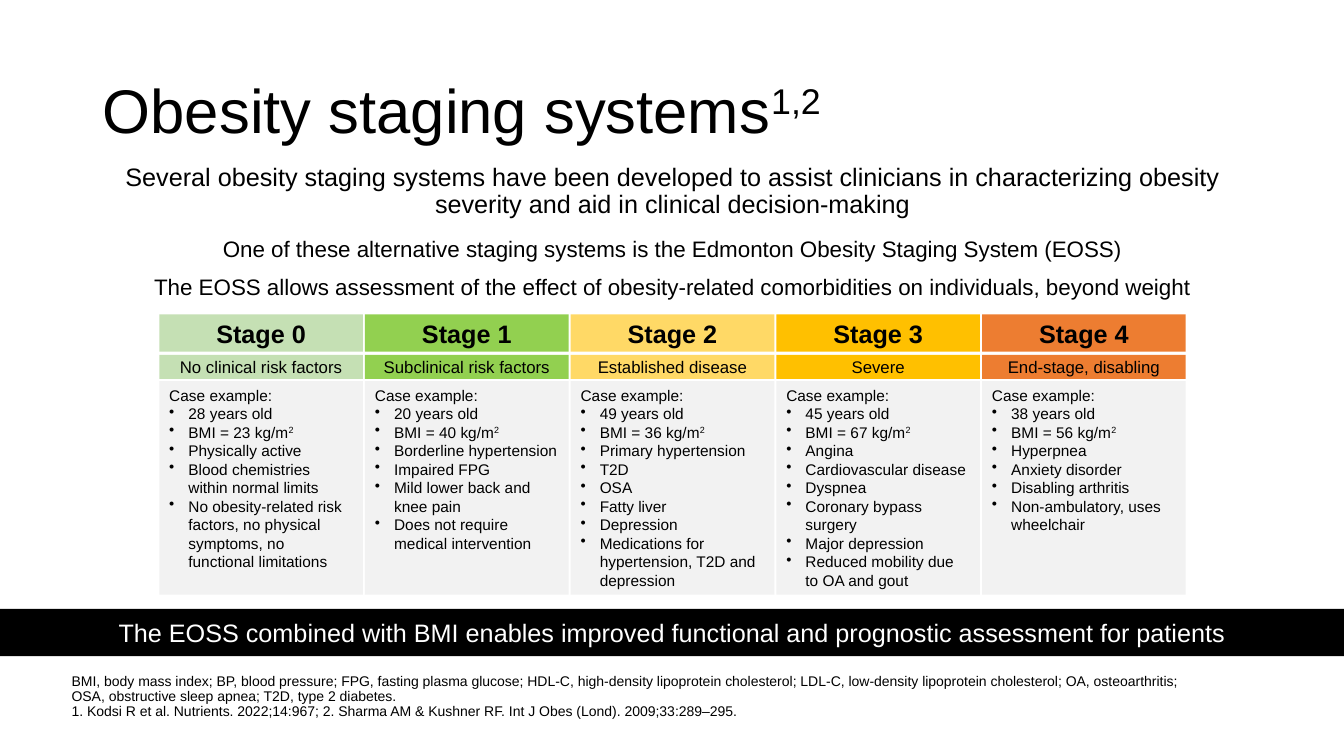
from dataclasses import dataclass

import pptx
import pptx.dml.color
import pptx.enum.shapes
import pptx.enum.text
import pptx.oxml.ns
import pptx.util
from lxml import etree

Inches = pptx.util.Inches
RGBColor = pptx.dml.color.RGBColor
Align = pptx.enum.text.PP_ALIGN
Anchor = pptx.enum.text.MSO_ANCHOR
AutoSize = pptx.enum.text.MSO_AUTO_SIZE

BLACK = RGBColor(0x00, 0x00, 0x00)
WHITE = RGBColor(0xFF, 0xFF, 0xFF)
PALE_GREY = RGBColor(0xF2, 0xF2, 0xF2)
PALE_GREEN = RGBColor(0xC5, 0xE0, 0xB4)
GREEN = RGBColor(0x92, 0xD0, 0x50)
YELLOW = RGBColor(0xFF, 0xD9, 0x66)
AMBER = RGBColor(0xFF, 0xC0, 0x00)
ORANGE = RGBColor(0xED, 0x7D, 0x31)

FONT = "Arial"
STAGE_LEFT, STAGE_PITCH, STAGE_WIDTH = 1.58, 2.04, 2.02
BULLET_INDENT = 0.19


@dataclass(frozen=True)
class Stage:
    risk: str
    color: RGBColor
    age: int
    bmi: int
    findings: tuple[str, ...]


@dataclass(frozen=True)
class Statement:
    text: str
    left: float
    top: float
    width: float
    height: float
    size: int
    anchor: Anchor
    auto_size: AutoSize
    line_spacing: float


STAGES = (
    Stage("No clinical risk factors", PALE_GREEN, 28, 23, (
        "Physically active", "Blood chemistries within normal limits",
        "No obesity-related risk factors, no physical symptoms, no functional limitations")),
    Stage("Subclinical risk factors", GREEN, 20, 40, (
        "Borderline hypertension", "Impaired FPG", "Mild lower back and knee pain",
        "Does not require medical intervention")),
    Stage("Established disease", YELLOW, 49, 36, (
        "Primary hypertension", "T2D", "OSA", "Fatty liver", "Depression",
        "Medications for hypertension, T2D and depression")),
    Stage("Severe", AMBER, 45, 67, (
        "Angina", "Cardiovascular disease", "Dyspnea", "Coronary bypass surgery",
        "Major depression", "Reduced mobility due to OA and gout")),
    Stage("End-stage, disabling", ORANGE, 38, 56, (
        "Hyperpnea", "Anxiety disorder", "Disabling arthritis",
        "Non-ambulatory, uses wheelchair")),
)

STATEMENTS = (
    Statement("Several obesity staging systems have been developed to assist clinicians in "
              "characterizing obesity severity and aid in clinical decision-making",
              0.71, 1.52, 11.92, 0.76, 18, Anchor.MIDDLE, AutoSize.NONE, 0.9),
    Statement("One of these alternative staging systems is the Edmonton Obesity Staging "
              "System (EOSS)",
              1.59, 2.28, 10.16, 0.37, 16, Anchor.MIDDLE, AutoSize.SHAPE_TO_FIT_TEXT, 1.0),
    Statement("The EOSS allows assessment of the effect of obesity-related comorbidities on "
              "individuals, beyond weight",
              0.71, 2.66, 11.92, 0.37, 16, Anchor.TOP, AutoSize.SHAPE_TO_FIT_TEXT, 1.0),
)

FOOTNOTE = (
    "BMI, body mass index; BP, blood pressure; FPG, fasting plasma glucose; HDL-C, high-density "
    "lipoprotein cholesterol; LDL-C, low-density lipoprotein cholesterol; OA, osteoarthritis; \v"
    "OSA, obstructive sleep apnea; T2D, type 2 diabetes. \v"
    "1. Kodsi R et al. Nutrients. 2022;14:967; 2. Sharma AM & Kushner RF. "
    "Int J Obes (Lond). 2009;33:289–295."
)


def format_paragraph(para, size: float, align: Align, color: RGBColor = BLACK,
                     bold: bool = False) -> None:
    para.alignment = align
    para.font.name = FONT
    para.font.size = pptx.util.Pt(size)
    para.font.bold = bold
    para.font.color.rgb = color


def add_superscript(para, text: str) -> None:
    span = para.add_run()
    span.text = text
    span.font._element.set("baseline", "30000")


def set_bullet(para, character: str = "") -> None:
    """Give the paragraph a hanging bullet, or none when no character is given."""
    properties = para._p.get_or_add_pPr()
    indent = Inches(BULLET_INDENT) if character else 0
    properties.set("marL", str(indent))
    properties.set("indent", str(-indent))
    tag = pptx.oxml.ns.qn("a:buChar" if character else "a:buNone")
    bullet = etree.SubElement(properties, tag)
    if character:
        bullet.set("char", character)


def add_panel(shapes, left: float, top: float, width: float, height: float, fill: RGBColor):
    panel = shapes.add_shape(pptx.enum.shapes.MSO_SHAPE.RECTANGLE, Inches(left), Inches(top),
                             Inches(width), Inches(height))
    panel.shadow.inherit = False
    panel.fill.solid()
    panel.fill.fore_color.rgb = fill
    panel.line.fill.background()
    panel.text_frame.word_wrap = True
    panel.text_frame.vertical_anchor = Anchor.MIDDLE
    return panel


def label_panel(panel, text: str, size: float, color: RGBColor = BLACK,
                bold: bool = False) -> None:
    para = panel.text_frame.paragraphs[0]
    para.text = text
    format_paragraph(para, size, Align.CENTER, color, bold)


def fill_case(frame, stage: Stage) -> None:
    frame.vertical_anchor = Anchor.TOP
    bmi = f"BMI = {stage.bmi} kg/m"
    frame.text = "\n".join(("Case example:", f"{stage.age} years old", bmi, *stage.findings))
    for para in frame.paragraphs:
        if para is not frame.paragraphs[0] and para.text != "Case example:":
            set_bullet(para, "•")
        if para.text == bmi:
            add_superscript(para, "2")
        format_paragraph(para, 11, Align.LEFT)


def add_stage(shapes, number: int, stage: Stage) -> None:
    left = STAGE_LEFT + number * STAGE_PITCH
    label_panel(add_panel(shapes, left, 3.12, STAGE_WIDTH, 0.37, stage.color),
                f"Stage {number}", 18, bold=True)
    label_panel(add_panel(shapes, left, 3.52, STAGE_WIDTH, 0.24, stage.color), stage.risk, 12)
    fill_case(add_panel(shapes, left, 3.78, STAGE_WIDTH, 2.12, PALE_GREY).text_frame, stage)


def add_statement(shapes, statement: Statement) -> None:
    box = shapes.add_textbox(Inches(statement.left), Inches(statement.top),
                             Inches(statement.width), Inches(statement.height))
    frame = box.text_frame
    frame.word_wrap = True
    frame.auto_size = statement.auto_size
    frame.vertical_anchor = statement.anchor
    para = frame.paragraphs[0]
    para.text = statement.text
    para.line_spacing = statement.line_spacing
    format_paragraph(para, statement.size, Align.CENTER)


def place(shape, left: float, top: float, width: float, height: float) -> None:
    shape.left, shape.top = Inches(left), Inches(top)
    shape.width, shape.height = Inches(width), Inches(height)


def fill_placeholder(frame, text: str, size: float, anchor: Anchor):
    frame.auto_size = AutoSize.NONE
    frame.vertical_anchor = anchor
    para = frame.paragraphs[0]
    para.text = text
    set_bullet(para)
    para.line_spacing = 0.9
    para.space_before = 0
    format_paragraph(para, size, Align.LEFT)
    return para


def main() -> None:
    deck = pptx.Presentation()
    deck.slide_width, deck.slide_height = Inches(13.33), Inches(7.5)
    page = deck.slides.add_slide(deck.slide_layouts[1])

    title, footnote = page.placeholders
    place(title, 0.92, 0.4, 11.5, 1.45)
    heading = fill_placeholder(title.text_frame, "Obesity staging systems", 44, Anchor.MIDDLE)
    add_superscript(heading, "1,2")

    place(footnote, 0.71, 6.79, 11.71, 0.35)
    frame = footnote.text_frame
    frame.margin_left = frame.margin_top = frame.margin_right = frame.margin_bottom = 0
    fill_placeholder(frame, FOOTNOTE, 10, Anchor.BOTTOM)

    staging = page.shapes.add_group_shape()
    for number, stage in enumerate(STAGES):
        add_stage(staging.shapes, number, stage)

    for statement in STATEMENTS:
        add_statement(page.shapes, statement)

    banner = add_panel(page.shapes, 0, 6.04, 13.33, 0.47, BLACK)
    label_panel(banner, "The EOSS combined with BMI enables improved functional and prognostic "
                "assessment for patients", 18, WHITE)
    deck.save("out.pptx")


if __name__ == "__main__":
    main()
